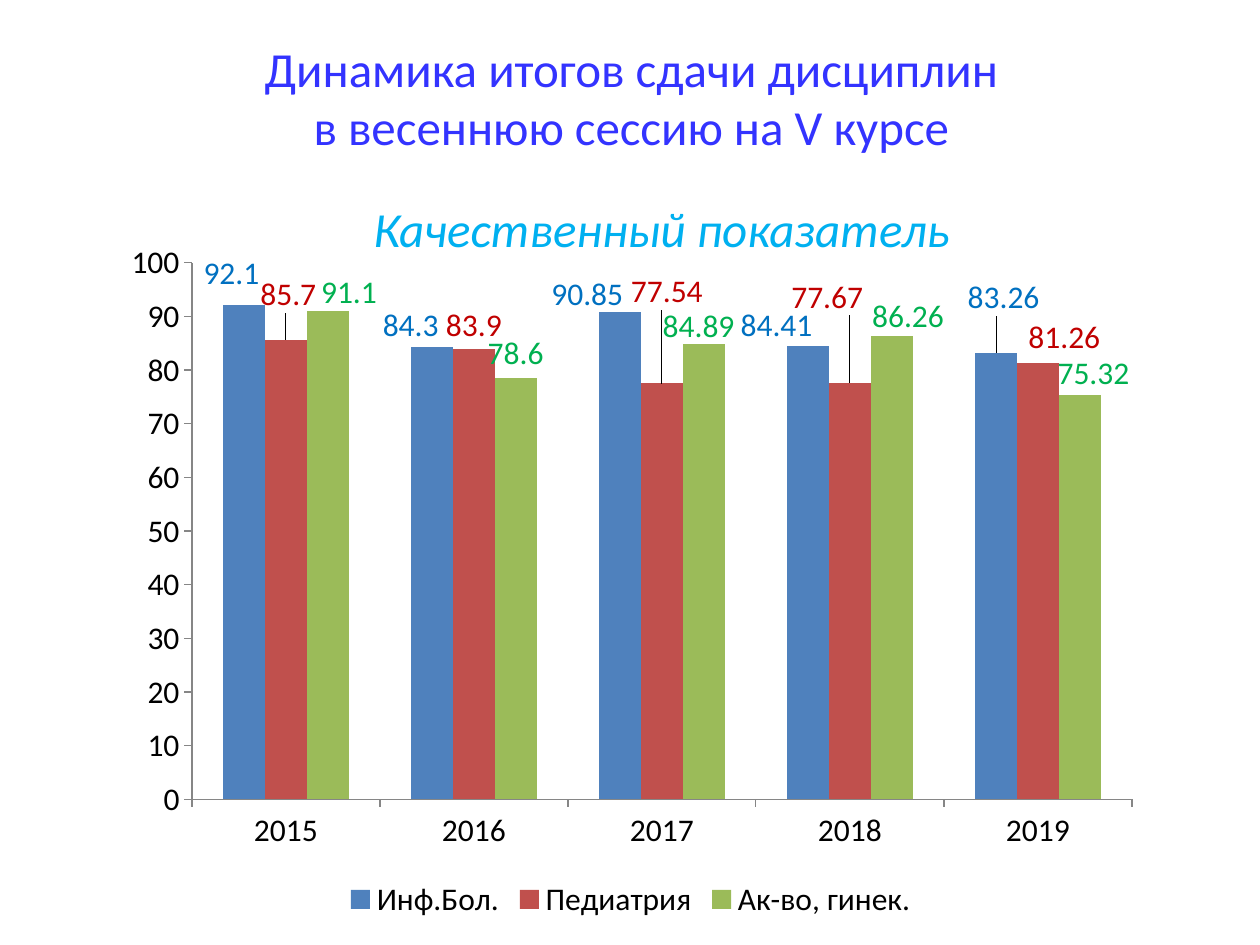
"""Build a slide with a clustered column chart of exam results by year."""
from typing import NamedTuple, Optional

from lxml.etree import SubElement
from pptx import Presentation
from pptx.chart.chart import Chart
from pptx.chart.data import CategoryChartData
from pptx.chart.series import BarSeries
from pptx.dml.color import RGBColor
from pptx.enum.chart import XL_CHART_TYPE, XL_LABEL_POSITION, XL_LEGEND_POSITION, XL_TICK_MARK
from pptx.enum.text import MSO_ANCHOR, MSO_AUTO_SIZE, PP_ALIGN
from pptx.oxml import parse_xml
from pptx.oxml.ns import nsdecls, qn
from pptx.text.text import Font, TextFrame
from pptx.util import Inches, Pt

TITLE_BLUE = RGBColor(0x33, 0x33, 0xFF)
SUBTITLE_BLUE = RGBColor(0x00, 0xB0, 0xF0)
BLACK = RGBColor(0, 0, 0)
AXIS_GRAY = RGBColor(0x86, 0x86, 0x86)
FONT = "Calibri"
CHART_WIDTH, CHART_HEIGHT = 8.29, 5.53
YEARS = ["2015", "2016", "2017", "2018", "2019"]


class Discipline(NamedTuple):
    """One series, with label shifts in inches for each year."""
    name: str
    scores: list[float]
    fill: RGBColor
    label_color: RGBColor
    label_shifts: list[Optional[tuple[float, float]]]


DISCIPLINES = [
    Discipline("Инф.Бол.", [92.1, 84.3, 90.85, 84.41, 83.26],
               RGBColor(0x4F, 0x81, 0xBD), RGBColor(0x00, 0x70, 0xC0),
               [(-0.1, -0.06), (-0.17, 0.02), (-0.26, 0.05), (-0.25, 0.02), (0.06, -0.25)]),
    Discipline("Педиатрия", [85.7, 83.9, 77.54, 77.67, 81.26],
               RGBColor(0xC0, 0x50, 0x4D), RGBColor(0xC0, 0x00, 0x00),
               [(0.02, -0.17), None, (0.04, -0.54), (-0.18, -0.49), (0.21, -0.02)]),
    Discipline("Ак-во, гинек.", [91.1, 78.6, 84.89, 86.26, 75.32],
               RGBColor(0x9B, 0xBB, 0x59), RGBColor(0x00, 0xB0, 0x50),
               [(0.17, 0.05), None, (-0.04, 0.05), (0.13, 0.03), (0.11, 0.02)]),
]


def set_font(font: Font, size: int, color: RGBColor, italic: bool = False) -> None:
    """Apply the slide typeface with a size and colour."""
    font.name = FONT
    font.size = Pt(size)
    font.italic = italic
    font.color.rgb = color


def write_heading(frame: TextFrame, lines: list[str], color: RGBColor, italic: bool = False) -> None:
    """Write centred heading lines, one paragraph each."""
    frame.word_wrap = True
    frame.auto_size = MSO_AUTO_SIZE.NONE
    frame.vertical_anchor = MSO_ANCHOR.MIDDLE
    for index, line in enumerate(lines):
        paragraph = frame.add_paragraph() if index else frame.paragraphs[0]
        paragraph.alignment = PP_ALIGN.CENTER
        run = paragraph.add_run()
        run.text = line
        set_font(run.font, 28, color, italic)


def manual_layout(**settings: object):
    """Return a manual chart layout element."""
    layout = parse_xml(f"<c:layout {nsdecls('c')}><c:manualLayout/></c:layout>")
    for tag, setting in settings.items():
        SubElement(layout[0], qn(f"c:{tag}")).set("val", str(setting))
    return layout


def format_series(series: BarSeries, discipline: Discipline) -> None:
    """Colour a series and place its value labels."""
    series.format.fill.solid()
    series.format.fill.fore_color.rgb = discipline.fill
    series.invert_if_negative = False
    labels = series.data_labels
    labels.show_value = True
    labels.position = XL_LABEL_POSITION.OUTSIDE_END
    set_font(labels.font, 18, discipline.label_color)
    for index, shift in enumerate(discipline.label_shifts):
        if shift is None:
            continue
        label = series.points[index].data_label
        set_font(label.font, 18, discipline.label_color)
        label.position = XL_LABEL_POSITION.OUTSIDE_END
        label_index = labels._element.xpath(f'c:dLbl/c:idx[@val="{index}"]')[0]
        label_index.addnext(manual_layout(x=shift[0] / CHART_WIDTH, y=shift[1] / CHART_HEIGHT))


def format_chart(chart: Chart) -> None:
    """Set the chart's axes, legend, plot area and series."""
    set_font(chart.font, 18, BLACK)
    chart.has_title = False
    chart.has_legend = True
    chart.legend.position = XL_LEGEND_POSITION.BOTTOM
    chart.legend.include_in_layout = False
    for axis in (chart.category_axis, chart.value_axis):
        axis.has_major_gridlines = False
        axis.major_tick_mark = XL_TICK_MARK.OUTSIDE
        axis.format.line.color.rgb = AXIS_GRAY
    chart.value_axis.minimum_scale = 0
    chart.value_axis.maximum_scale = 100
    chart.value_axis.major_unit = 10

    plot = chart.plots[0]
    plot.gap_width = 150
    plot.overlap = 0
    plot.vary_by_categories = False
    plot_area = chart._chartSpace.chart.plotArea
    for layout in plot_area.findall(qn("c:layout")):
        plot_area.remove(layout)
    plot_area.insert(0, manual_layout(layoutTarget="inner", xMode="edge", yMode="edge",
                                      x=0.08, y=0.05, w=0.9, h=0.77))
    for series, discipline in zip(plot.series, DISCIPLINES):
        format_series(series, discipline)


def main() -> None:
    """Build and save the presentation."""
    presentation = Presentation()
    presentation.slide_width, presentation.slide_height = Inches(10), Inches(7.5)
    slide = presentation.slides.add_slide(presentation.slide_layouts[5])

    title = slide.shapes.title
    title.left, title.top = Inches(0.51), Inches(0.21)
    title.width, title.height = Inches(9), Inches(1.12)
    write_heading(title.text_frame,
                  ["Динамика итогов сдачи дисциплин", "в весеннюю сессию на V курсе"], TITLE_BLUE)
    subtitle = slide.shapes.add_textbox(Inches(0.75), Inches(1.53), Inches(9), Inches(0.56))
    write_heading(subtitle.text_frame, ["Качественный показатель"], SUBTITLE_BLUE, italic=True)

    results = CategoryChartData()
    results.categories = YEARS
    for discipline in DISCIPLINES:
        results.add_series(discipline.name, discipline.scores)
    frame = slide.shapes.add_chart(XL_CHART_TYPE.COLUMN_CLUSTERED, Inches(0.86), Inches(1.81),
                                   Inches(CHART_WIDTH), Inches(CHART_HEIGHT), results)
    format_chart(frame.chart)
    presentation.save("out.pptx")


if __name__ == "__main__":
    main()
